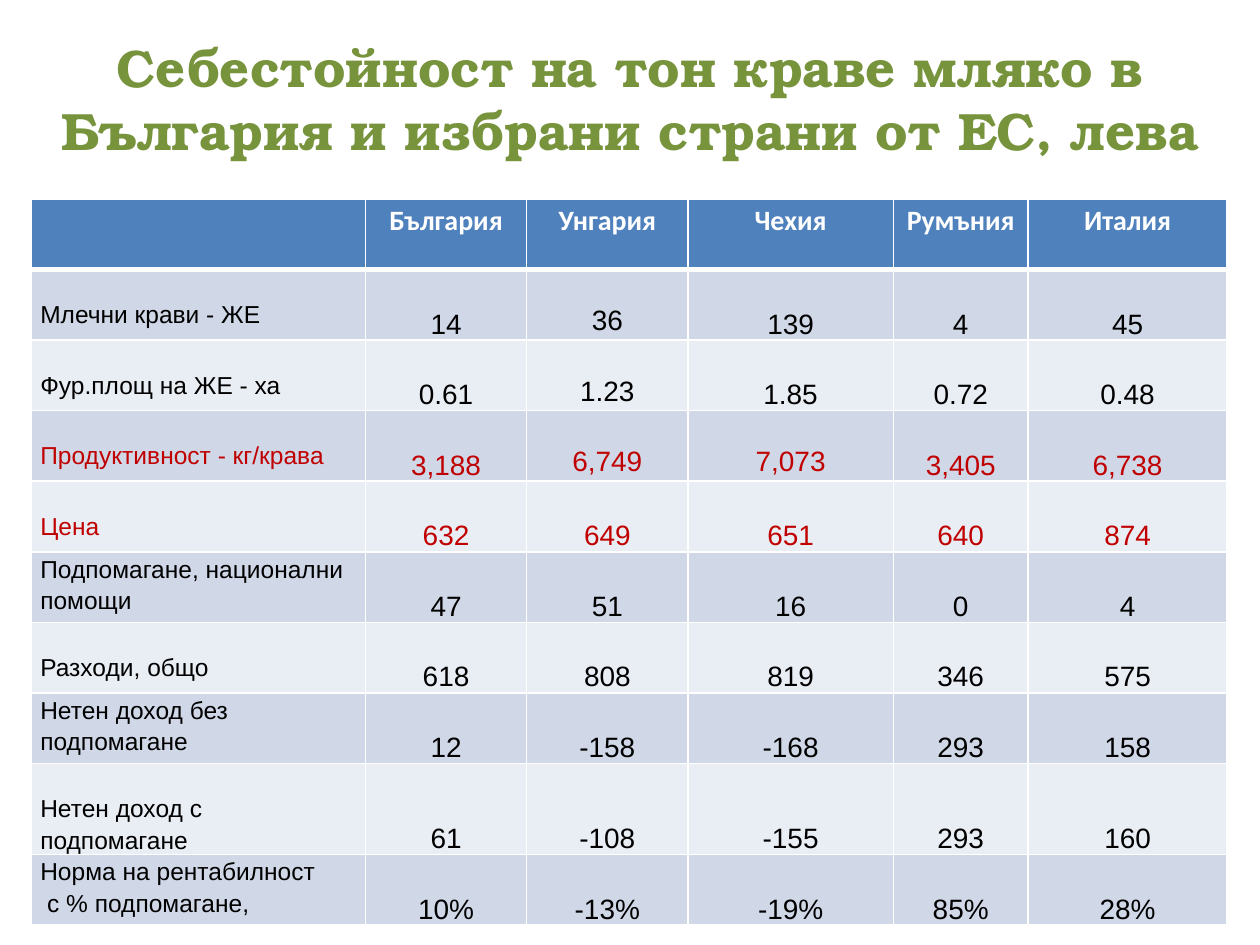
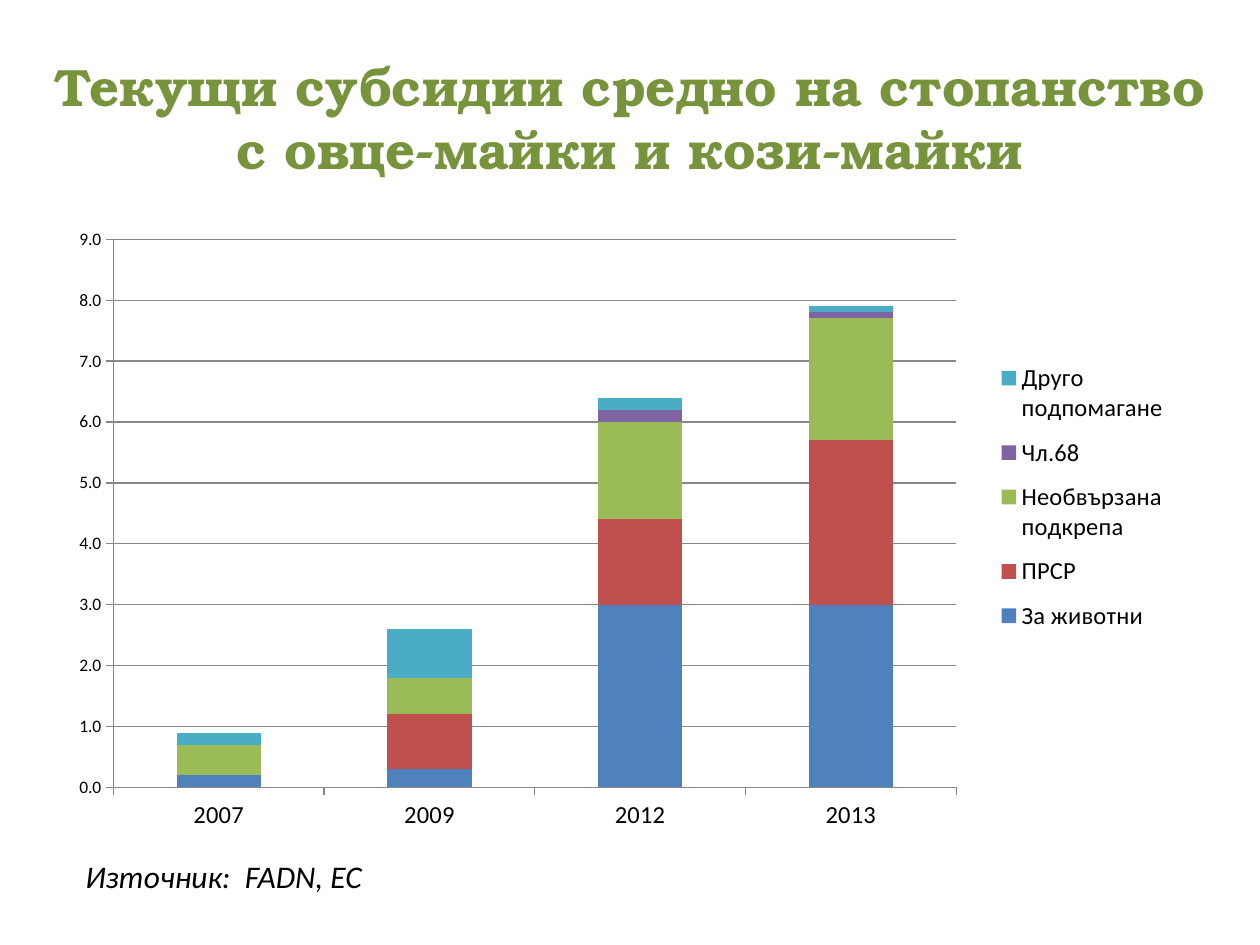
from dataclasses import dataclass

from lxml.etree import SubElement
from pptx import Presentation
from pptx.chart.data import CategoryChartData
from pptx.dml.color import RGBColor
from pptx.enum.chart import XL_CHART_TYPE, XL_LEGEND_POSITION, XL_TICK_MARK
from pptx.enum.text import MSO_ANCHOR, MSO_AUTO_SIZE, PP_ALIGN
from pptx.oxml.ns import qn
from pptx.util import Inches, Pt

TITLE_FONT = "TeX Gyre Bonum"
TITLE_GREEN = "77933C"
BLACK = "000000"
WHITE = "FFFFFF"
HIGHLIGHT_RED = "C00000"
HEADER_BLUE = "4F81BD"
BANDS = ("D0D8E8", "E9EDF4")
AXIS_GRAY = "878787"


@dataclass(frozen=True)
class Place:
    left: float
    top: float
    width: float
    height: float

    def lengths(self) -> tuple:
        return tuple(Inches(n) for n in (self.left, self.top, self.width, self.height))


@dataclass(frozen=True)
class TextStyle:
    size: float
    font: str
    colour: str = BLACK
    bold: bool = False
    italic: bool = False


@dataclass(frozen=True)
class CostRow:
    label: tuple[str, ...]
    values: tuple[str, ...]
    colour: str = BLACK
    lowered_label: bool = False
    raised_values: tuple[int, ...] = ()
    height: float = 0.56


@dataclass(frozen=True)
class SubsidySeries:
    name: str
    values: tuple[float, ...]
    colour: str


TITLE_STYLE = TextStyle(30, TITLE_FONT, TITLE_GREEN, bold=True)
HEADER_STYLE = TextStyle(16, "Calibri", WHITE, bold=True)
COUNTRIES = ("България", "Унгария", "Чехия", "Румъния", "Италия")
COLUMN_WIDTHS = (2.65, 1.28, 1.28, 1.63, 1.07, 1.58)
HEADER_HEIGHT = 0.56
COST_ROWS = (
    CostRow(("Млечни крави - ЖЕ",), ("14", "36", "139", "4", "45"),
            lowered_label=True, raised_values=(1,)),
    CostRow(("Фур.площ на ЖЕ - ха",), ("0.61", "1.23", "1.85", "0.72", "0.48"),
            lowered_label=True, raised_values=(1,)),
    CostRow(("Продуктивност - кг/крава",), ("3,188", "6,749", "7,073", "3,405", "6,738"),
            HIGHLIGHT_RED, lowered_label=True, raised_values=(1, 2)),
    CostRow(("Цена",), ("632", "649", "651", "640", "874"),
            HIGHLIGHT_RED, lowered_label=True),
    CostRow(("Подпомагане, национални помощи",), ("47", "51", "16", "0", "4")),
    CostRow(("Разходи, общо",), ("618", "808", "819", "346", "575"), lowered_label=True),
    CostRow(("Нетен доход без подпомагане",), ("12", "-158", "-168", "293", "158")),
    CostRow(("Нетен доход с подпомагане",), ("61", "-108", "-155", "293", "160"),
            lowered_label=True, height=0.71),
    CostRow(("Норма на рентабилност", " с % подпомагане,"),
            ("10%", "-13%", "-19%", "85%", "28%")),
)
CHART_PLACE = Place(0.5, 1.75, 9, 4.95)
PLOT_PLACE = Place(0.4, 0.15, 6.69, 4.35)
LEGEND_PLACE = Place(7.28, 1.02, 1.62, 2.35)
YEARS = ("2007", "2009", "2012", "2013")
SUBSIDIES = (
    SubsidySeries("За животни", (0.2, 0.3, 3, 3), "4F81BD"),
    SubsidySeries("ПРСР", (0, 0.9, 1.4, 2.7), "C0504D"),
    SubsidySeries("Необвързана подкрепа", (0.5, 0.6, 1.6, 2), "9BBB59"),
    SubsidySeries("Чл.68", (0, 0, 0.2, 0.1), "8064A2"),
    SubsidySeries("Друго подпомагане", (0.2, 0.8, 0.2, 0.1), "4BACC6"),
)


def rgb(colour: str) -> RGBColor:
    return RGBColor.from_string(colour)


def add_span(para, text: str, style: TextStyle) -> None:
    span = para.add_run()
    span.text = text
    span.font.size = Pt(style.size)
    span.font.name = style.font
    span.font.bold = style.bold
    span.font.italic = style.italic
    span.font.color.rgb = rgb(style.colour)


def add_titled_page(deck, text: str, place: Place):
    page = deck.slides.add_slide(deck.slide_layouts[5])
    title = page.shapes.title
    title.left, title.top, title.width, title.height = place.lengths()
    title.text_frame.vertical_anchor = MSO_ANCHOR.MIDDLE
    para = title.text_frame.paragraphs[0]
    para.alignment = PP_ALIGN.CENTER
    add_span(para, text, TITLE_STYLE)
    return page


def set_borders(cell, top: float = 1, bottom: float = 1) -> None:
    properties = cell._tc.get_or_add_tcPr()
    for side, width in (("L", 1), ("R", 1), ("T", top), ("B", bottom)):
        line = SubElement(properties, qn(f"a:ln{side}"), w=str(Pt(width)))
        fill = SubElement(line, qn("a:solidFill"))
        SubElement(fill, qn("a:srgbClr"), val=WHITE)


def fill_cell(cell, lines: tuple[str, ...], style: TextStyle, alignment, anchor,
              space_above: float = 0, space_below: float = 0,
              space_right: float = 0.07) -> None:
    cell.margin_left = Inches(0.07)
    cell.margin_right = Inches(space_right)
    cell.margin_top = Inches(space_above)
    cell.margin_bottom = Inches(space_below)
    cell.vertical_anchor = anchor
    frame = cell.text_frame
    for index, text in enumerate(lines):
        para = frame.add_paragraph() if index else frame.paragraphs[0]
        para.alignment = alignment
        para.line_spacing = 1.15
        add_span(para, text, style)


def add_cost_table(page) -> None:
    place = Place(0.25, 1.58, sum(COLUMN_WIDTHS), 5.75)
    table = page.shapes.add_table(
        len(COST_ROWS) + 1, len(COLUMN_WIDTHS), *place.lengths()).table
    table.horz_banding = False
    for column, width in zip(table.columns, COLUMN_WIDTHS):
        column.width = Inches(width)

    table.rows[0].height = Inches(HEADER_HEIGHT)
    for column, country in enumerate(("", *COUNTRIES)):
        cell = table.cell(0, column)
        set_borders(cell, bottom=3)
        cell.fill.solid()
        cell.fill.fore_color.rgb = rgb(HEADER_BLUE)
        if country:
            fill_cell(cell, (country,), HEADER_STYLE, PP_ALIGN.CENTER, MSO_ANCHOR.TOP)

    for number, row in enumerate(COST_ROWS, start=1):
        table.rows[number].height = Inches(row.height)
        for cell in table.rows[number].cells:
            set_borders(cell, top=3 if number == 1 else 1)
            cell.fill.solid()
            cell.fill.fore_color.rgb = rgb(BANDS[(number - 1) % 2])
        fill_cell(table.cell(number, 0), row.label, TextStyle(14, "Arial", row.colour),
                  PP_ALIGN.LEFT, MSO_ANCHOR.TOP,
                  space_above=0.22 if row.lowered_label else 0, space_right=0.12)
        for index, value in enumerate(row.values):
            fill_cell(table.cell(number, index + 1), (value,),
                      TextStyle(16, "Arial", row.colour),
                      PP_ALIGN.CENTER, MSO_ANCHOR.BOTTOM,
                      space_below=0.03 if index in row.raised_values else 0)


def set_chart_layout(part, place: Place, position: int, inner: bool = False) -> None:
    for old in part.findall(qn("c:layout")):
        part.remove(old)
    layout = SubElement(part, qn("c:layout"))
    part.insert(position, layout)
    manual = SubElement(layout, qn("c:manualLayout"))
    settings = [("xMode", "edge"), ("yMode", "edge"),
                ("x", place.left / CHART_PLACE.width),
                ("y", place.top / CHART_PLACE.height),
                ("w", place.width / CHART_PLACE.width),
                ("h", place.height / CHART_PLACE.height)]
    if inner:
        settings.insert(0, ("layoutTarget", "inner"))
    for name, value in settings:
        SubElement(manual, qn(f"c:{name}"), val=str(value))


def add_subsidy_chart(page) -> None:
    data = CategoryChartData(number_format="0.0")
    data.categories = YEARS
    for subsidy in SUBSIDIES:
        data.add_series(subsidy.name, subsidy.values)
    chart = page.shapes.add_chart(
        XL_CHART_TYPE.COLUMN_STACKED, *CHART_PLACE.lengths(), data).chart
    chart.has_title = False
    chart.font.name = "Calibri"
    chart.font.size = Pt(10)
    chart.font.color.rgb = rgb(BLACK)

    plot = chart.plots[0]
    plot.vary_by_categories = False
    plot.overlap = 100
    plot.gap_width = 150
    for series, subsidy in zip(plot.series, SUBSIDIES):
        series.format.fill.solid()
        series.format.fill.fore_color.rgb = rgb(subsidy.colour)

    for axis, size in ((chart.category_axis, 14), (chart.value_axis, 10)):
        axis.major_tick_mark = XL_TICK_MARK.OUTSIDE
        axis.tick_labels.font.size = Pt(size)
        axis.format.line.color.rgb = rgb(AXIS_GRAY)
    values = chart.value_axis
    values.minimum_scale, values.maximum_scale, values.major_unit = 0, 9, 1
    values.tick_labels.number_format = "0.0"
    values.tick_labels.number_format_is_linked = False
    values.has_major_gridlines = True
    values.major_gridlines.format.line.color.rgb = rgb(AXIS_GRAY)

    chart.has_legend = True
    legend = chart.legend
    legend.position = XL_LEGEND_POSITION.RIGHT
    legend.include_in_layout = False
    legend.font.size = Pt(14)
    set_chart_layout(chart._chartSpace.chart.plotArea, PLOT_PLACE, 0, inner=True)
    set_chart_layout(legend._element, LEGEND_PLACE, 1)


def add_source(page) -> None:
    box = page.shapes.add_textbox(*Place(0.58, 6.75, 2.48, 0.4).lengths())
    box.text_frame.word_wrap = False
    box.text_frame.auto_size = MSO_AUTO_SIZE.SHAPE_TO_FIT_TEXT
    add_span(box.text_frame.paragraphs[0], "Източник:  FADN, EC",
             TextStyle(18, "Calibri", italic=True))


def main() -> None:
    deck = Presentation()
    deck.slide_width, deck.slide_height = Inches(10), Inches(7.5)

    cost_page = add_titled_page(
        deck, "Себестойност на тон краве мляко в България и избрани страни от ЕС, лева",
        Place(0.17, 0, 9.67, 1.55))
    add_cost_table(cost_page)

    subsidy_page = add_titled_page(
        deck, "Текущи субсидии средно на стопанство с овце-майки и кози-майки",
        Place(0.25, 0.3, 9.5, 1.25))
    add_subsidy_chart(subsidy_page)
    add_source(subsidy_page)

    deck.save("out.pptx")


if __name__ == "__main__":
    main()
